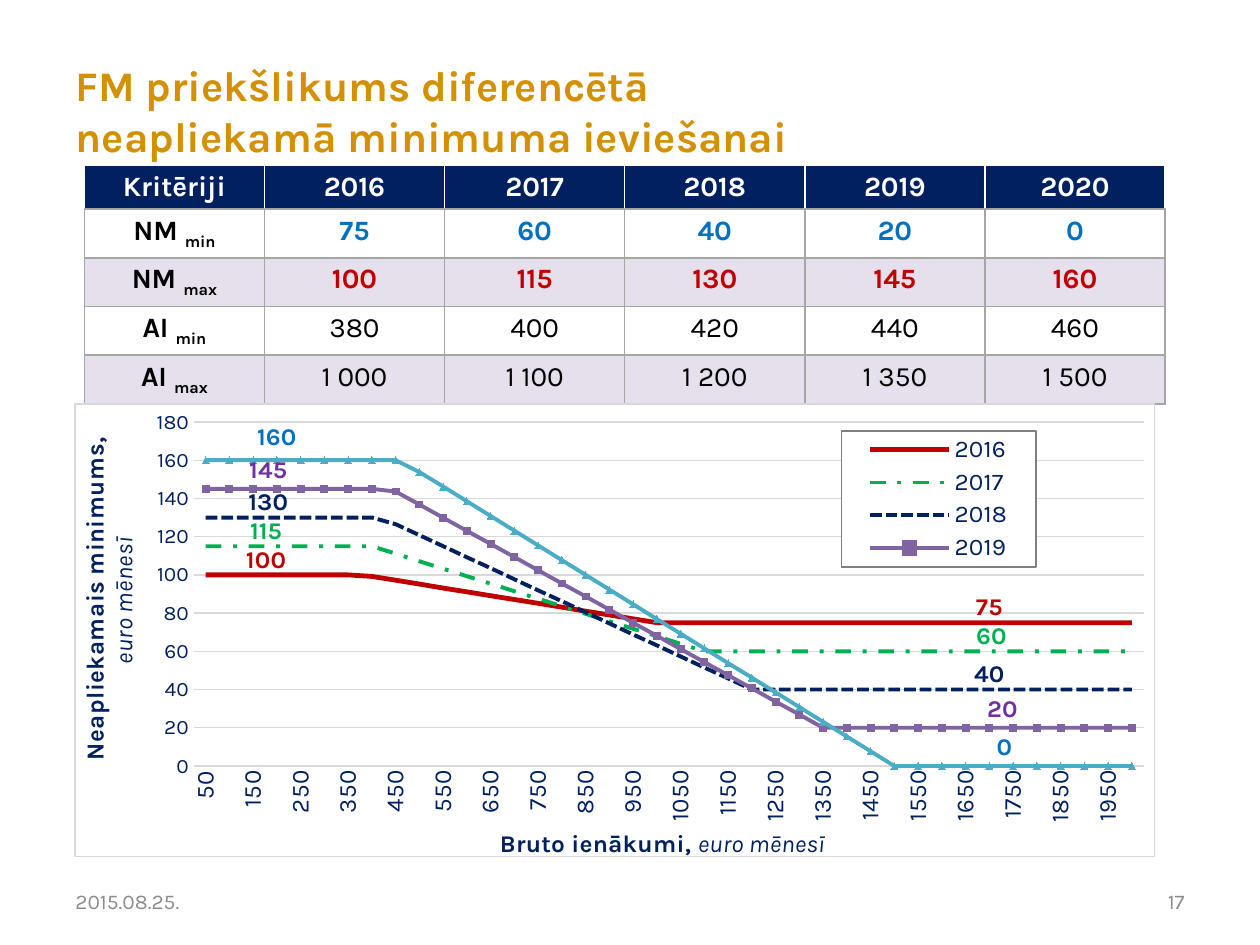
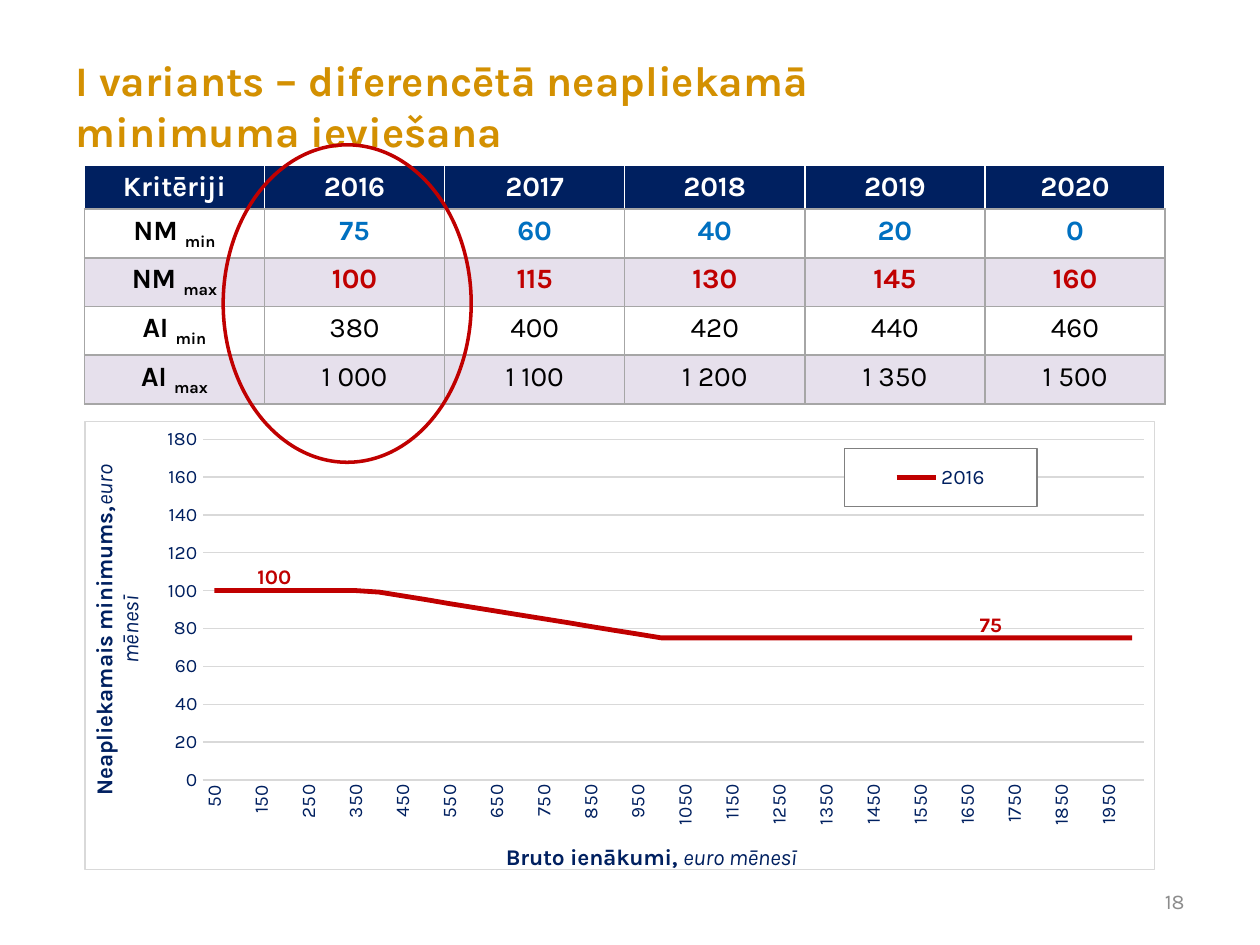
import dataclasses

import pptx
import pptx.chart.data
import pptx.dml.color
import pptx.enum.chart
import pptx.enum.dml
import pptx.enum.shapes
import pptx.enum.text
import pptx.oxml
import pptx.oxml.ns
import pptx.util

Cm = pptx.util.Cm
Pt = pptx.util.Pt
Dash = pptx.enum.dml.MSO_LINE
Marker = pptx.enum.chart.XL_MARKER_STYLE
Align = pptx.enum.text.PP_ALIGN
Anchor = pptx.enum.text.MSO_ANCHOR
qn = pptx.oxml.ns.qn


@dataclasses.dataclass(frozen=True)
class Theme:
    font: str = "Karla"
    gold: str = "D39001"
    navy: str = "002060"
    blue: str = "0070C0"
    red: str = "C00000"
    green: str = "00B050"
    purple: str = "7030A0"
    violet: str = "8064A2"
    teal: str = "4BACC6"
    lilac: str = "E6E0EC"
    white: str = "FFFFFF"
    black: str = "000000"
    border: str = "A6A6A6"
    grid: str = "D9D9D9"
    frame: str = "808080"
    footer: str = "8C8C8C"
    title_size: float = 24
    table_size: float = 16
    footer_size: float = 12


THEME = Theme()


@dataclasses.dataclass(frozen=True)
class Year:
    name: str
    nm_min: int
    nm_max: int
    ai_min: int
    ai_max: int
    color: str
    label_color: str
    width: float
    dash: object
    marker: object
    labels: tuple

    def minimum_at(self, income):
        share = (income - self.ai_min) / (self.ai_max - self.ai_min)
        share = min(max(share, 0), 1)
        return round(self.nm_max - share * (self.nm_max - self.nm_min), 1)


INCOMES = range(50, 2001, 50)
YEARS = [
    Year("2016", 75, 100, 380, 1000, THEME.red, THEME.red, 2.75, Dash.SOLID,
         Marker.NONE, ((3, -0.01, 0.01), (33, 0, 0.01))),
    Year("2017", 60, 115, 400, 1100, THEME.green, THEME.green, 2.25, Dash.DASH_DOT,
         Marker.NONE, ((3, -0.01, 0.01), (34, -0.02, 0.01))),
    Year("2018", 40, 130, 420, 1200, THEME.navy, THEME.navy, 2.25, Dash.SQUARE_DOT,
         Marker.NONE, ((4, -0.03, 0.01), (33, 0, 0.01))),
    Year("2019", 20, 145, 440, 1350, THEME.violet, THEME.purple, 2.25, Dash.SOLID,
         Marker.SQUARE, ((4, -0.03, 0.01), (34, -0.01, 0.01))),
    Year("2020", 0, 160, 460, 1500, THEME.teal, THEME.blue, 2.25, Dash.SOLID,
         Marker.TRIANGLE, ((3, 0, 0), (35, -0.03, 0.01))),
]
CRITERIA = [
    ("NM ", "min", "nm_min", THEME.blue, True),
    ("NM ", "max", "nm_max", THEME.red, True),
    ("AI ", "min", "ai_min", THEME.black, False),
    ("AI ", "max", "ai_max", THEME.black, False),
]


def rgb(value):
    return pptx.dml.color.RGBColor.from_string(value)


def apply(target, **formats):
    for name, value in formats.items():
        setattr(target, name, value)


def style_font(font, size, color, **formats):
    apply(font, name=THEME.font, size=Pt(size), **formats)
    font.color.rgb = rgb(color)


def add_span(para, text, size, color, **formats):
    span = para.add_run()
    span.text = text
    style_font(span.font, size, color, **formats)
    return span


def xml(markup):
    tag, rest = markup.split(" ", 1)
    return pptx.oxml.parse_xml(f"{tag} {pptx.oxml.ns.nsdecls('a', 'c')} {rest}")


def line_xml(tag, color, points):
    return (f'<a:{tag} w="{int(Pt(points))}"><a:solidFill>'
            f'<a:srgbClr val="{color}"/></a:solidFill></a:{tag}>')


def panel_xml(color):
    return xml(f'<c:spPr ><a:solidFill><a:srgbClr val="{THEME.white}"/></a:solidFill>'
               f'{line_xml("ln", color, 0.75)}</c:spPr>')


def layout_xml(x, y, size=None, mode="edge", target=""):
    parts = target
    if mode:
        parts += f'<c:xMode val="{mode}"/><c:yMode val="{mode}"/>'
    parts += f'<c:x val="{x}"/><c:y val="{y}"/>'
    if size:
        parts += f'<c:w val="{size[0]}"/><c:h val="{size[1]}"/>'
    return xml(f"<c:layout ><c:manualLayout>{parts}</c:manualLayout></c:layout>")


def drop_layout(element):
    for layout in element.findall(qn("c:layout")):
        element.remove(layout)


def add_title(page, text, width, height):
    box = page.shapes.title
    apply(box, left=Cm(1.27), top=Cm(1.32), width=Cm(width), height=Cm(height))
    box.fill.solid()
    box.fill.fore_color.rgb = rgb(THEME.white)
    apply(box.text_frame, word_wrap=True, vertical_anchor=Anchor.MIDDLE,
          auto_size=pptx.enum.text.MSO_AUTO_SIZE.NONE)
    para = box.text_frame.paragraphs[0]
    para.alignment = Align.LEFT
    add_span(para, text, THEME.title_size, THEME.gold, bold=True)


def add_footer(page, text, left, alignment):
    box = page.shapes.add_textbox(Cm(left), Cm(17.65), Cm(5.92), Cm(1.02))
    apply(box.text_frame, word_wrap=True, vertical_anchor=Anchor.MIDDLE)
    para = box.text_frame.paragraphs[0]
    para.alignment = alignment
    add_span(para, text, THEME.footer_size, THEME.footer)


def fill_cell(cell, text, fill, color, bold, subscript="", edge=THEME.border):
    apply(cell, margin_top=Cm(0.11), margin_bottom=Cm(0.1))
    para = cell.text_frame.paragraphs[0]
    para.alignment = Align.CENTER
    add_span(para, text, THEME.table_size, color, bold=bold)
    if subscript:
        span = add_span(para, subscript, THEME.table_size, color, bold=bold)
        span.font._element.set("baseline", "-25000")
    properties = cell._tc.get_or_add_tcPr()
    for tag in ("lnL", "lnR", "lnT", "lnB"):
        shade = THEME.border if tag == "lnB" else edge
        properties.append(xml(line_xml(tag, shade, 1)))
    cell.fill.solid()
    cell.fill.fore_color.rgb = rgb(fill)


def add_criteria_table(page):
    table = page.shapes.add_table(len(CRITERIA) + 1, len(YEARS) + 1, Cm(1.7),
                                  Cm(3.33), Cm(21.79), Cm(4.4)).table
    apply(table, first_row=False, horz_banding=False)
    for column, text in enumerate(["Kritēriji"] + [year.name for year in YEARS]):
        fill_cell(table.cell(0, column), text, THEME.navy, THEME.white, True,
                  edge=THEME.white)
    for row, (text, subscript, field, color, bold) in enumerate(CRITERIA, 1):
        fill = THEME.white if row % 2 else THEME.lilac
        fill_cell(table.cell(row, 0), text, fill, THEME.black, True, subscript)
        for column, year in enumerate(YEARS, 1):
            value = f"{getattr(year, field):,}".replace(",", " ")
            fill_cell(table.cell(row, column), value, fill, color, bold)


def style_series(series, year, label_size):
    series.smooth = False
    line = series.format.line
    apply(line, width=Pt(year.width), dash_style=year.dash)
    line.color.rgb = rgb(year.color)
    series.marker.style = year.marker
    if year.marker != Marker.NONE:
        series.marker.size = 4
        series.marker.format.fill.solid()
        series.marker.format.fill.fore_color.rgb = rgb(year.color)
        series.marker.format.line.color.rgb = rgb(year.color)
    series.data_labels.show_value = False
    for leader in series._element.iter(qn("c:showLeaderLines")):
        leader.set("val", "0")
    for index, shift_x, shift_y in year.labels:
        label = series.points[index].data_label
        style_font(label.font, label_size, year.label_color, bold=True)
        label.position = pptx.enum.chart.XL_LABEL_POSITION.ABOVE
        if shift_x or shift_y:
            element = label._get_or_add_dLbl()
            element.insert(1, layout_xml(shift_x, shift_y, mode=None))


def style_axis(axis, name, unit, title_size, tick_size, spot, rotation):
    ticks = pptx.enum.chart.XL_TICK_MARK.NONE
    apply(axis, major_tick_mark=ticks, minor_tick_mark=ticks)
    style_font(axis.tick_labels.font, tick_size, THEME.navy)
    title = axis.axis_title
    para = title.text_frame.paragraphs[0]
    add_span(para, name + " ", title_size, THEME.navy, bold=True, italic=False)
    add_span(para, unit, title_size, THEME.navy, bold=False, italic=True)
    body = title._element.find(".//" + qn("a:bodyPr"))
    body.set("rot", str(rotation))
    body.set("vert", "horz")
    drop_layout(title._element)
    title._element.find(qn("c:tx")).addnext(layout_xml(*spot))


def style_legend(chart, size, extent, hidden):
    chart.has_legend = True
    legend = chart.legend
    apply(legend, position=pptx.enum.chart.XL_LEGEND_POSITION.BOTTOM,
          include_in_layout=False)
    style_font(legend.font, size, THEME.navy)
    element = legend._element
    drop_layout(element)
    place = element.find(qn("c:legendPos"))
    place.addnext(layout_xml(0.71, 0.06, extent))
    for index in hidden:
        place.addnext(xml(f'<c:legendEntry ><c:idx val="{index}"/>'
                          '<c:delete val="1"/></c:legendEntry>'))
    element.find(qn("c:overlay")).addnext(panel_xml(THEME.frame))


def add_minimum_chart(page, years, frame, sizes, spots, legend_extent, hidden=()):
    data = pptx.chart.data.CategoryChartData(number_format="0")
    data.categories = [str(income) for income in INCOMES]
    for year in years:
        data.add_series(year.name, [year.minimum_at(income) for income in INCOMES])
    chart = page.shapes.add_chart(pptx.enum.chart.XL_CHART_TYPE.LINE_MARKERS,
                                  *map(Cm, frame), data).chart
    chart.has_title = False
    style_font(chart.font, 10, THEME.black)
    chart.plots[0].vary_by_categories = False
    for series, year in zip(chart.plots[0].series, years):
        style_series(series, year, sizes["label"])

    incomes, minimums = chart.category_axis, chart.value_axis
    style_axis(incomes, "Bruto ienākumi,", "euro mēnesī", sizes["title"],
               sizes["category"], spots["category"], 0)
    incomes.format.line.color.rgb = rgb(THEME.grid)
    incomes._element.find(qn("c:txPr")).find(qn("a:bodyPr")).set("rot", "-5400000")
    incomes._element.find(qn("c:noMultiLvlLbl")).addprevious(
        xml('<c:tickLblSkip val="2"/>'))
    style_axis(minimums, "Neapliekamais minimums,", "euro mēnesī", sizes["title"],
               sizes["value"], spots["value"], -5400000)
    apply(minimums, minimum_scale=0, maximum_scale=180, major_unit=20,
          has_major_gridlines=True)
    apply(minimums.tick_labels, number_format="0", number_format_is_linked=False)
    minimums.format.line.fill.background()
    minimums.major_gridlines.format.line.color.rgb = rgb(THEME.grid)
    minimums.major_gridlines.format.line.width = Pt(0.75)

    style_legend(chart, sizes["legend"], legend_extent, hidden)
    space = chart._chartSpace
    area = space.find(".//" + qn("c:plotArea"))
    drop_layout(area)
    area.insert(0, layout_xml(0.11, 0.04, (0.88, 0.76),
                              target='<c:layoutTarget val="inner"/>'))
    space.find(qn("c:chart")).addnext(panel_xml(THEME.grid))


def add_highlight(page):
    ring = page.shapes.add_shape(pptx.enum.shapes.MSO_SHAPE.OVAL, Cm(4.5), Cm(2.92),
                                 Cm(5), Cm(6.4))
    ring.shadow.inherit = False
    ring.fill.background()
    ring.line.color.rgb = rgb(THEME.red)
    ring.line.width = Pt(2)


def add_page(deck, number, title, width, height):
    page = deck.slides.add_slide(deck.slide_layouts[5])
    add_footer(page, str(number), 18.21, Align.RIGHT)
    add_title(page, title, width, height)
    add_criteria_table(page)
    return page


def main():
    deck = pptx.Presentation()
    apply(deck, slide_width=Cm(25.4), slide_height=Cm(19.05))

    page = add_page(deck, 17, "FM priekšlikums diferencētā neapliekamā minimuma "
                    "ieviešanai", 16.43, 1.8)
    add_footer(page, "2015.08.25.", 1.27, Align.LEFT)
    add_minimum_chart(
        page, YEARS, (1.5, 8.13, 21.79, 9.32),
        {"title": 14, "category": 14, "value": 12, "legend": 14, "label": 14},
        {"category": (0.39, 0.93), "value": (0, 0.08)}, (0.18, 0.3), hidden=(4,))

    page = add_page(deck, 18, "I variants – diferencētā neapliekamā minimuma "
                    "ieviešana", 16.92, 1.6)
    add_minimum_chart(
        page, YEARS[:1], (1.7, 8.48, 21.59, 9.19),
        {"title": 13, "category": 11, "value": 11, "legend": 12, "label": 12},
        {"category": (0.39, 0.93), "value": (0, 0.09)}, (0.18, 0.13))
    add_highlight(page)

    deck.save("out.pptx")


if __name__ == "__main__":
    main()
